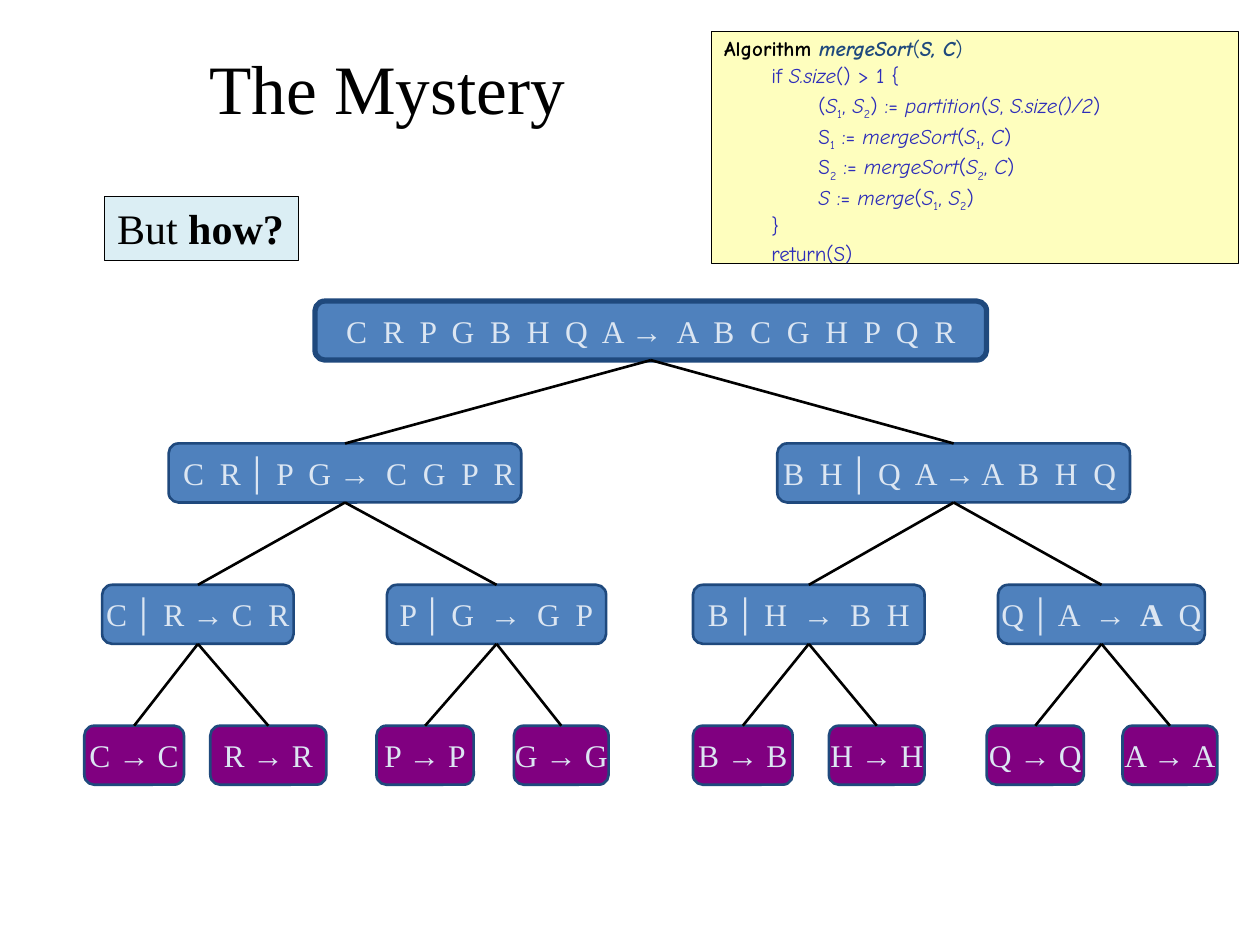
from pptx import Presentation
from pptx.dml.color import RGBColor
from pptx.enum.shapes import MSO_CONNECTOR as CONN, MSO_SHAPE as SHAPE
from pptx.enum.text import MSO_ANCHOR as ANCHOR, PP_ALIGN as ALIGN
from pptx.oxml.ns import qn
from pptx.util import Cm, Pt
from lxml.etree import SubElement

BLACK = RGBColor(0x00, 0x00, 0x00)
CREAM = RGBColor(0xFE, 0xFE, 0xBE)
ICE = RGBColor(0xDB, 0xEE, 0xF4)
PALE = RGBColor(0xDC, 0xE6, 0xF2)
NAVY = RGBColor(0x1F, 0x49, 0x7D)
BLUE = RGBColor(0x4F, 0x81, 0xBD)
INDIGO = RGBColor(0x2D, 0x2D, 0xB9)
PURPLE = RGBColor(0x80, 0x00, 0x80)

SERIF, SANS, COMIC = "Times New Roman", "Arial", "Comic Neue"
MARKS = {"*": "bold", "_": "italic", "~": "sub"}

ALGORITHM = [
    (0.95, "if _S.size_() > 1 {"),
    (1.9, "(_S_~1~, _S_~2~) := _partition_(_S_, _S.size()/2_)"),
    (1.9, "S~1~ := _mergeSort_(_S_~1~,_ C_)"),
    (1.9, "S~2~ := _mergeSort_(_S_~2~,_ C_)"),
    (1.9, "_S_ := _merge_(_S_~1~,_ S_~2~)"),
    (0.95, "}"),
    (0.95, "return(S)"),
]

LEVEL_TOPS = [6.07, 8.94, 11.79, 14.63]
BOX_HEIGHT = 1.19


def leaf(letter, left, width):
    return f"{letter} *→ *{letter}", left, width, []


TREE = ("C  R  P  G  B  H  Q  A *→*  A  B  C  G  H  P  Q  R", 6.35, 13.54, [
    (" C  R *│* P  G *→*  C  G  P  R", 3.4, 7.11, [
        ("C *│ *R *→ *C  R", 2.06, 3.86,
         [leaf("C", 1.7, 2.01), leaf("R", 4.24, 2.34)]),
        ("P *│* G  *→  *G  P", 7.8, 4.42,
         [leaf("P", 7.59, 1.96), leaf("G", 10.36, 1.91)]),
    ]),
    ("B  H *│* Q  A *→* A  B  H  Q ", 15.67, 7.11, [
        ("B *│* H  *→  *B  H", 13.97, 4.67,
         [leaf("B", 13.97, 2.01), leaf("H", 16.71, 1.93)]),
        ("Q *│* A  *→  A*  Q", 20.12, 4.17,
         [leaf("Q", 19.89, 1.96), leaf("A", 22.63, 1.91)]),
    ]),
])


def split_marks(text):
    style, part = dict.fromkeys(MARKS.values(), False), ""
    for char in text:
        if char in MARKS:
            if part:
                yield part, dict(style)
            part = ""
            style[MARKS[char]] = not style[MARKS[char]]
        else:
            part += char
    if part:
        yield part, style


class Deck:
    def __init__(self):
        self.prs = Presentation()
        self.prs.slide_width, self.prs.slide_height = Cm(25.4), Cm(19.05)
        self.s = self.prs.slides.add_slide(self.prs.slide_layouts[5])

    def add_text(self, p, text, size, color, font=SERIF):
        for part, style in split_marks(text):
            r = p.add_run()
            r.text = part
            if style.pop("sub"):
                r._r.get_or_add_rPr().set("baseline", "-25000")
            style.update(size=Pt(size), name=SANS if "│" in part else font)
            for name, value in style.items():
                setattr(r.font, name, value)
            r.font.color.rgb = color

    def title(self, text, left, top, width, height):
        sp = self.s.shapes.title
        box = dict(left=left, top=top, width=width, height=height)
        for name, value in box.items():
            setattr(sp, name, Cm(value))
        tf = sp.text_frame
        tf.vertical_anchor = ANCHOR.MIDDLE
        tf.paragraphs[0].alignment = ALIGN.CENTER
        self.add_text(tf.paragraphs[0], text, 39.6, BLACK)

    def box(self, left, top, width, height, fill, line=BLACK, weight=0.75,
            kind=SHAPE.RECTANGLE, anchor=ANCHOR.TOP, align=ALIGN.LEFT):
        sp = self.s.shapes.add_shape(kind, Cm(left), Cm(top), Cm(width), Cm(height))
        sp.shadow.inherit = False
        sp.fill.solid()
        sp.fill.fore_color.rgb = fill
        sp.line.color.rgb = line
        sp.line.width = Pt(weight)
        sp.text_frame.word_wrap = False
        sp.text_frame.vertical_anchor = anchor
        sp.text_frame.paragraphs[0].alignment = align
        return sp

    def code(self, left, top, width, height, heading, lines):
        tf = self.box(left, top, width, height, CREAM).text_frame
        tf.word_wrap = True
        for _ in lines:
            tf.add_paragraph()
        form = dict(line_spacing=0.9, space_before=Pt(2.8), alignment=ALIGN.LEFT)
        for p in tf.paragraphs:
            for name, value in form.items():
                setattr(p, name, value)
        for text, color in heading:
            self.add_text(tf.paragraphs[0], text, 12, color, COMIC)
        for p, (indent, text) in zip(tf.paragraphs[1:], lines):
            p._p.get_or_add_pPr().set("marL", str(int(Cm(indent))))
            self.add_text(p, text, 12, INDIGO, COMIC)

    def callout(self, text, left, top, width, height):
        sp = self.box(left, top, width, height, ICE)
        self.add_text(sp.text_frame.paragraphs[0], text, 24, BLACK)

    def branch(self, parent, child):
        line = self.s.shapes.add_connector(CONN.STRAIGHT, 0, 0, 0, 0)
        line.begin_connect(parent, 2)
        line.end_connect(child, 0)
        line.line.color.rgb = BLACK
        line.line.width = Pt(1.5)
        SubElement(line._element.spPr, qn("a:effectLst"))

    def tree(self, node, level=0):
        text, left, width, children = node
        sp = self.box(left, LEVEL_TOPS[level], width, BOX_HEIGHT,
                      BLUE if children else PURPLE, NAVY, 1.5 if level else 3,
                      SHAPE.ROUNDED_RECTANGLE, ANCHOR.MIDDLE, ALIGN.CENTER)
        self.add_text(sp.text_frame.paragraphs[0], text, 18, PALE)
        for child in children:
            self.branch(sp, self.tree(child, level + 1))
        return sp


def main():
    deck = Deck()
    deck.title("The Mystery", 1.27, 0.76, 13.08, 1.98)
    heading = [("*Algorithm *", BLACK), ("*_mergeSort_*(*_S, C_*)", NAVY)]
    deck.code(14.35, 0.64, 10.62, 4.67, heading, ALGORITHM)
    deck.callout("But *how?*", 2.11, 3.96, 3.91, 1.3)
    deck.tree(TREE)
    deck.prs.save("out.pptx")


if __name__ == "__main__":
    main()
